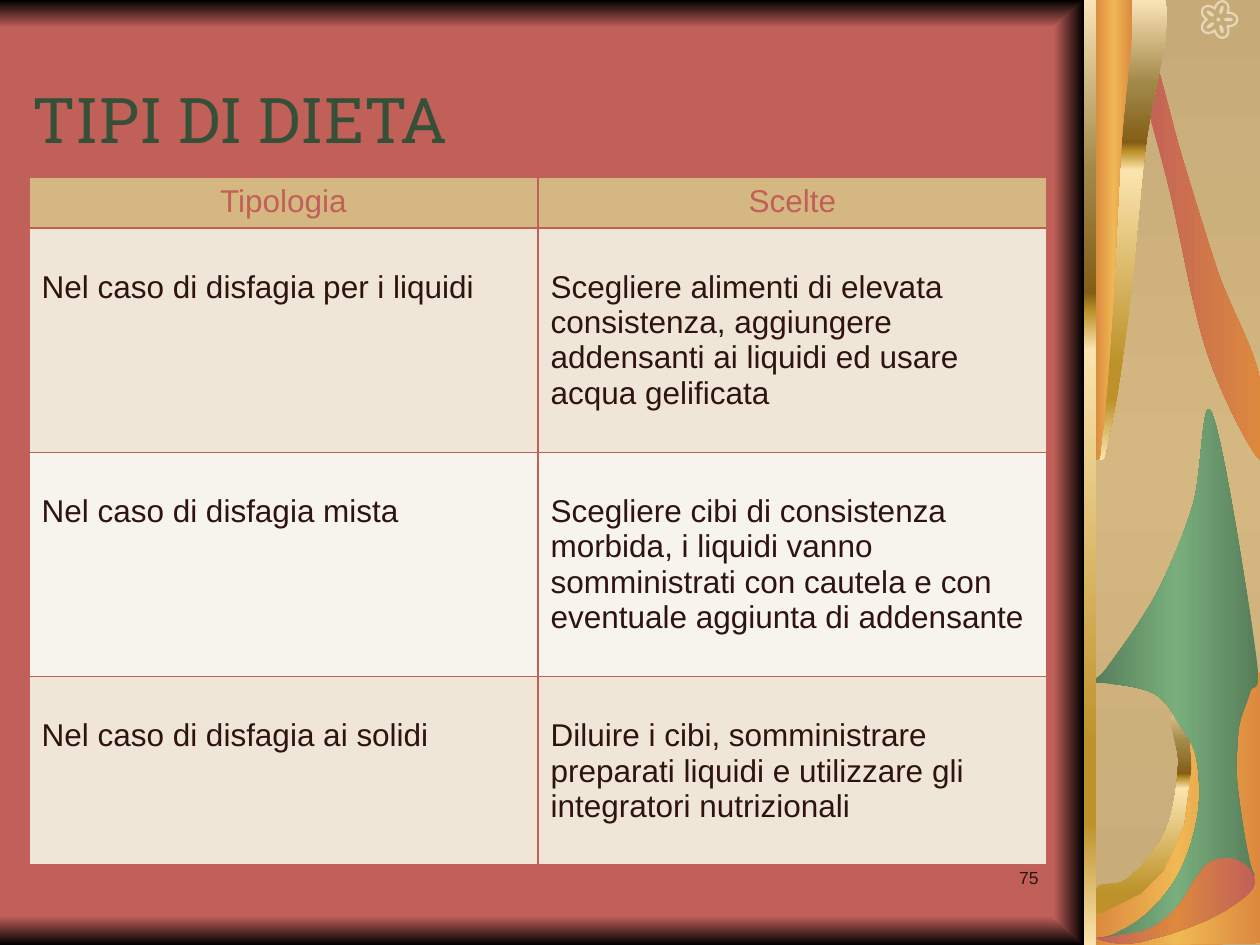
from math import cos, pi, sin

from lxml import etree
from pptx import Presentation
from pptx.dml.color import RGBColor
from pptx.enum.shapes import MSO_SHAPE
from pptx.enum.text import MSO_ANCHOR, PP_ALIGN
from pptx.oxml.ns import qn
from pptx.util import Inches, Pt

RECTANGLE, OVAL = MSO_SHAPE.RECTANGLE, MSO_SHAPE.OVAL
LEFT, CENTER, RIGHT = PP_ALIGN.LEFT, PP_ALIGN.CENTER, PP_ALIGN.RIGHT
TOP, MIDDLE = MSO_ANCHOR.TOP, MSO_ANCHOR.MIDDLE

COLORS = {
    "rose": "C16059", "black": "000000", "sand": "D5B781", "dark_sand": "C6AA78",
    "petal": "E7D6B7", "orange": "DC893E", "amber": "F0B854",
    "leaf": "577D59", "light_leaf": "79AF7D", "title": "355037", "text": "2F1311",
    "cream": "FAE3B7", "khaki": "A28949", "bronze": "835E17", "gold": "BD922A",
    "pale_gold": "FBE4AE", "beige": "EFE6D8", "ivory": "F7F3ED",
}
GOLD = [(0, "cream"), (18, "khaki"), (31, "bronze"), (33, "gold"),
        (37, "pale_gold"), (79, "gold"), (87, "gold"), (100, "pale_gold")]
ORANGE = [(0, "orange"), (50, "amber"), (100, "orange")]
GREEN = [(0, "leaf"), (50, "light_leaf"), (100, "leaf")]
SAND = [(0, "dark_sand"), (50, "sand"), (100, "dark_sand")]
FADE_OUT = [(0, "rose"), (100, "black")]
FADE_IN = [(0, "black"), (100, "rose")]
FLAME = [(0, "rose"), (100, "orange")]
EMBER = [(0, "rose"), (50, "orange"), (100, "rose")]

GOLD_HOOK = [
    (9.34, 5.64), (9.23, 5.7, 9.37, 5.92, 9.35, 6.08), (9.34, 6.25, 9.31, 6.48, 9.24, 6.62),
    (9.17, 6.77, 9.03, 6.91, 8.94, 6.98), (8.85, 7.05, 8.74, 6.98, 8.7, 7.06),
    (8.7, 7.49), (10, 7.49), (10, 5.68), (9.89, 5.37, 9.48, 5.64, 9.34, 5.64)]
ORANGE_HOOK = [
    (8.68, 7.5), (8.68, 7.28), (9.05, 7.1), (9.24, 6.91), (9.4, 6.55), (9.46, 6.1),
    (9.44, 5.76), (9.87, 5.31), (10, 5.34), (10, 7.49)]
LEAF = [
    (9.62, 3.28), (9.54, 3.08, 9.54, 3.77, 9.47, 4), (9.4, 4.23, 9.3, 4.47, 9.19, 4.69),
    (9.08, 4.9, 8.89, 5.16, 8.8, 5.28), (8.72, 5.4, 8.67, 5.38, 8.68, 5.41),
    (8.68, 5.43, 8.76, 5.41, 8.84, 5.43), (8.93, 5.44, 9.08, 5.46, 9.17, 5.51),
    (9.25, 5.56, 9.3, 5.64, 9.35, 5.73), (9.41, 5.82, 9.48, 5.91, 9.5, 6.04),
    (9.52, 6.17, 9.53, 6.34, 9.5, 6.5), (9.47, 6.66, 9.41, 6.86, 9.31, 7.01),
    (9.21, 7.16, 9.08, 7.3, 8.89, 7.39), (8.78, 7.46, 8.69, 7.43, 8.71, 7.45),
    (8.73, 7.46, 8.9, 7.5, 9.01, 7.48), (9.12, 7.46, 9.26, 7.41, 9.34, 7.34),
    (9.43, 7.28, 9.48, 7.15, 9.54, 7.07), (9.6, 7, 9.65, 6.93, 9.71, 6.9),
    (9.76, 6.87, 9.83, 6.89, 9.88, 6.9), (9.92, 6.91, 9.95, 6.97, 9.96, 6.95),
    (9.96, 6.94, 9.93, 6.91, 9.91, 6.79), (9.88, 6.67, 9.84, 6.39, 9.82, 6.22),
    (9.81, 6.05, 9.82, 5.91, 9.83, 5.79), (9.85, 5.67, 9.89, 5.6, 9.92, 5.5),
    (9.94, 5.4, 10.02, 5.56, 9.97, 5.2), (9.92, 4.84, 9.71, 3.48, 9.62, 3.28)]
FLAME_RIBBON = [
    (9.14, 0.4), (9.2, 0.51, 9.29, 0.94, 9.38, 1.24), (9.47, 1.54, 9.58, 1.9, 9.68, 2.2),
    (9.79, 2.49, 9.96, 2.78, 10, 3.02), (10, 3.65), (9.94, 3.61, 9.7, 3.16, 9.58, 2.8),
    (9.46, 2.44, 9.37, 1.87, 9.28, 1.5), (9.19, 1.13, 9.07, 0.76, 9.05, 0.58),
    (9.02, 0.4, 9.09, 0.29, 9.14, 0.4)]
GOLD_RIBBON = [
    (8.69, 3.64), (8.78, 3.67, 8.76, 3.64, 8.8, 3.46), (8.85, 3.28, 8.9, 2.92, 8.95, 2.54),
    (9, 2.16, 9.04, 1.6, 9.09, 1.18), (9.14, 0.75, 9.32, 0.2, 9.25, 0), (8.69, 0)]
EMBER_WAVE = [
    (8.7, 7.45), (8.7, 7.44, 8.83, 7.44, 8.9, 7.42), (8.98, 7.41, 9.07, 7.4, 9.15, 7.36),
    (9.22, 7.32, 9.3, 7.25, 9.35, 7.19), (9.41, 7.12, 9.45, 7.03, 9.49, 6.97),
    (9.54, 6.91, 9.56, 6.87, 9.61, 6.84), (9.66, 6.82, 9.72, 6.81, 9.77, 6.81),
    (9.81, 6.82, 9.83, 6.83, 9.86, 6.85), (9.89, 6.87, 9.93, 6.89, 9.94, 6.93),
    (9.96, 6.96, 9.98, 7.01, 9.94, 7.06), (9.91, 7.11, 9.81, 7.17, 9.74, 7.22),
    (9.66, 7.26, 9.58, 7.31, 9.49, 7.34), (9.39, 7.38, 9.25, 7.43, 9.15, 7.45),
    (9.06, 7.48, 8.99, 7.49, 8.91, 7.49), (8.83, 7.49, 8.71, 7.46, 8.7, 7.45)]
RIGHT_FRAME = [(8.6, 0), (8.36, 0.21), (8.36, 7.29), (8.6, 7.5)]

DIETS = [
    ("Tipologia", "Scelte"),
    ("Nel caso di disfagia per i liquidi",
     "Scegliere alimenti di elevata consistenza, aggiungere addensanti ai liquidi "
     "ed usare acqua gelificata"),
    ("Nel caso di disfagia mista",
     "Scegliere cibi di consistenza morbida, i liquidi vanno somministrati con cautela "
     "e con eventuale aggiunta di addensante"),
    ("Nel caso di disfagia ai solidi",
     "Diluire i cibi, somministrare preparati liquidi e utilizzare gli integratori nutrizionali"),
]
ROW_HEIGHTS = [0.4, 1.78, 1.78, 1.49]
ROW_FILLS = ["sand", "beige", "ivory", "beige"]


def rgb(name):
    """Return the named colour."""
    return RGBColor.from_string(COLORS[name])


def paint(shape, stops, angle=0):
    """Fill a shape with a linear gradient, without line or shadow."""
    shape.shadow.inherit = False
    shape.line.fill.background()
    shape.fill.gradient()
    gradient = shape._element.spPr.find(qn("a:gradFill"))
    stop_list = gradient.find(qn("a:gsLst"))
    for old_stop in list(stop_list):
        stop_list.remove(old_stop)
    for position, name in stops:
        stop = etree.SubElement(stop_list, qn("a:gs"), pos=str(position * 1000))
        etree.SubElement(stop, qn("a:srgbClr"), val=COLORS[name])
    gradient.find(qn("a:lin")).set("ang", str(angle * 60000))


def add_band(slide, box, stops):
    """Add a rectangle with a vertical gradient."""
    band = slide.shapes.add_shape(RECTANGLE, *map(Inches, box))
    paint(band, stops, 90)


def flatten(outline, steps=10):
    """Turn an outline of points and cubic curves into plain points."""
    points = []
    for segment in outline:
        if len(segment) == 2:
            points.append(segment)
            continue
        x0, y0 = points[-1]
        x1, y1, x2, y2, x3, y3 = segment
        for step in range(1, steps + 1):
            t = step / steps
            a, b, c, d = (1 - t) ** 3, 3 * t * (1 - t) ** 2, 3 * t * t * (1 - t), t ** 3
            points.append((a * x0 + b * x1 + c * x2 + d * x3,
                           a * y0 + b * y1 + c * y2 + d * y3))
    return points


def add_outline(slide, outline):
    """Add a closed freeform."""
    start, *rest = [(Inches(x), Inches(y)) for x, y in flatten(outline)]
    builder = slide.shapes.build_freeform(*start)
    builder.add_line_segments(rest, close=True)
    return builder.convert_to_shape()


def add_oval(slide, x, y, width, height, rotation=0):
    """Add a petal-coloured oval around its centre."""
    oval = slide.shapes.add_shape(OVAL, Inches(x - width / 2), Inches(y - height / 2),
                                  Inches(width), Inches(height))
    oval.rotation = rotation
    oval.shadow.inherit = False
    oval.fill.solid()
    oval.fill.fore_color.rgb = rgb("petal")
    oval.line.fill.background()


def add_flower(slide, x=9.67, y=0.155):
    """Add the five-petalled flower."""
    rim = []
    for degree in range(0, 360, 4):
        theta = degree * pi / 180
        radius = 0.09 + 0.06 * abs(cos(2.5 * theta))
        rim.append((x + radius * cos(theta), y + radius * sin(theta)))
    flower = add_outline(slide, rim)
    flower.shadow.inherit = False
    flower.fill.background()
    flower.line.color.rgb = rgb("petal")
    flower.line.width = Pt(1.25)
    add_oval(slide, x, y, 0.03, 0.03)
    for degree in range(0, 360, 72):
        theta = degree * pi / 180
        add_oval(slide, x + 0.08 * cos(theta), y + 0.08 * sin(theta), 0.07, 0.03, degree)


def write(frame, text, size=18, font="Arial", color="text", align=LEFT, anchor=TOP):
    """Write one formatted paragraph into a text frame."""
    frame.word_wrap = True
    frame.vertical_anchor = anchor
    paragraph = frame.paragraphs[0]
    paragraph.alignment = align
    run = paragraph.add_run()
    run.text = text
    run.font.size = Pt(size)
    run.font.name = font
    run.font.color.rgb = rgb(color)


def add_text(slide, box, text, **style):
    """Add a text box."""
    write(slide.shapes.add_textbox(*map(Inches, box)).text_frame, text, **style)


def add_borders(cell):
    """Draw thin rose borders around a cell."""
    properties = cell._tc.get_or_add_tcPr()
    for index, side in enumerate(("a:lnL", "a:lnR", "a:lnT", "a:lnB")):
        border = etree.Element(qn(side), w=str(Pt(1)))
        fill = etree.SubElement(border, qn("a:solidFill"))
        etree.SubElement(fill, qn("a:srgbClr"), val=COLORS["rose"])
        properties.insert(index, border)


def add_diet_table(slide):
    """Add the table of diets and choices."""
    box = map(Inches, (0.23, 1.41, 8.08, sum(ROW_HEIGHTS)))
    table = slide.shapes.add_table(len(DIETS), 2, *box).table
    for row, (texts, height, fill) in enumerate(zip(DIETS, ROW_HEIGHTS, ROW_FILLS)):
        table.rows[row].height = Inches(height)
        header = row == 0
        for cell, text in zip(table.rows[row].cells, texts):
            cell.fill.solid()
            cell.fill.fore_color.rgb = rgb(fill)
            cell.margin_top = Inches(0.05 if header else 0.33)
            write(cell.text_frame, text, color="rose" if header else "text",
                  align=CENTER if header else LEFT)
            add_borders(cell)


def main():
    """Build the slide and save it."""
    deck = Presentation()
    deck.slide_width, deck.slide_height = Inches(10), Inches(7.5)
    slide = deck.slides.add_slide(deck.slide_layouts[6])
    slide.background.fill.solid()
    slide.background.fill.fore_color.rgb = rgb("rose")
    add_band(slide, (0, 7.27, 8.84, 0.23), FADE_OUT)
    add_band(slide, (0, 0, 8.84, 0.22), FADE_IN)
    add_band(slide, (8.7, 0, 1.3, 7.5), SAND)
    add_flower(slide)
    orange_ribbon = [tuple(8.69 + (value - 8.69) * 0.52 if i % 2 == 0 else value
                           for i, value in enumerate(segment)) for segment in GOLD_RIBBON]
    for outline, stops, angle in (
            (GOLD_HOOK, GOLD, 90), (ORANGE_HOOK, ORANGE, 0), (LEAF, GREEN, 0),
            (FLAME_RIBBON, FLAME, 0), (GOLD_RIBBON, GOLD, 90), (orange_ribbon, ORANGE, 0)):
        paint(add_outline(slide, outline), stops, angle)
    add_band(slide, (8.6, 0, 0.1, 7.5), GOLD)
    paint(add_outline(slide, EMBER_WAVE), EMBER)
    paint(add_outline(slide, RIGHT_FRAME), FADE_OUT)
    add_text(slide, (6.42, 6.83, 1.92, 0.52), "75", size=10, align=RIGHT)
    add_text(slide, (0.16, 0.31, 8.18, 1.25), "TIPI DI DIETA", size=36,
             font="Roboto Slab", color="title", anchor=MIDDLE)
    add_diet_table(slide)
    deck.save("out.pptx")


if __name__ == "__main__":
    main()
